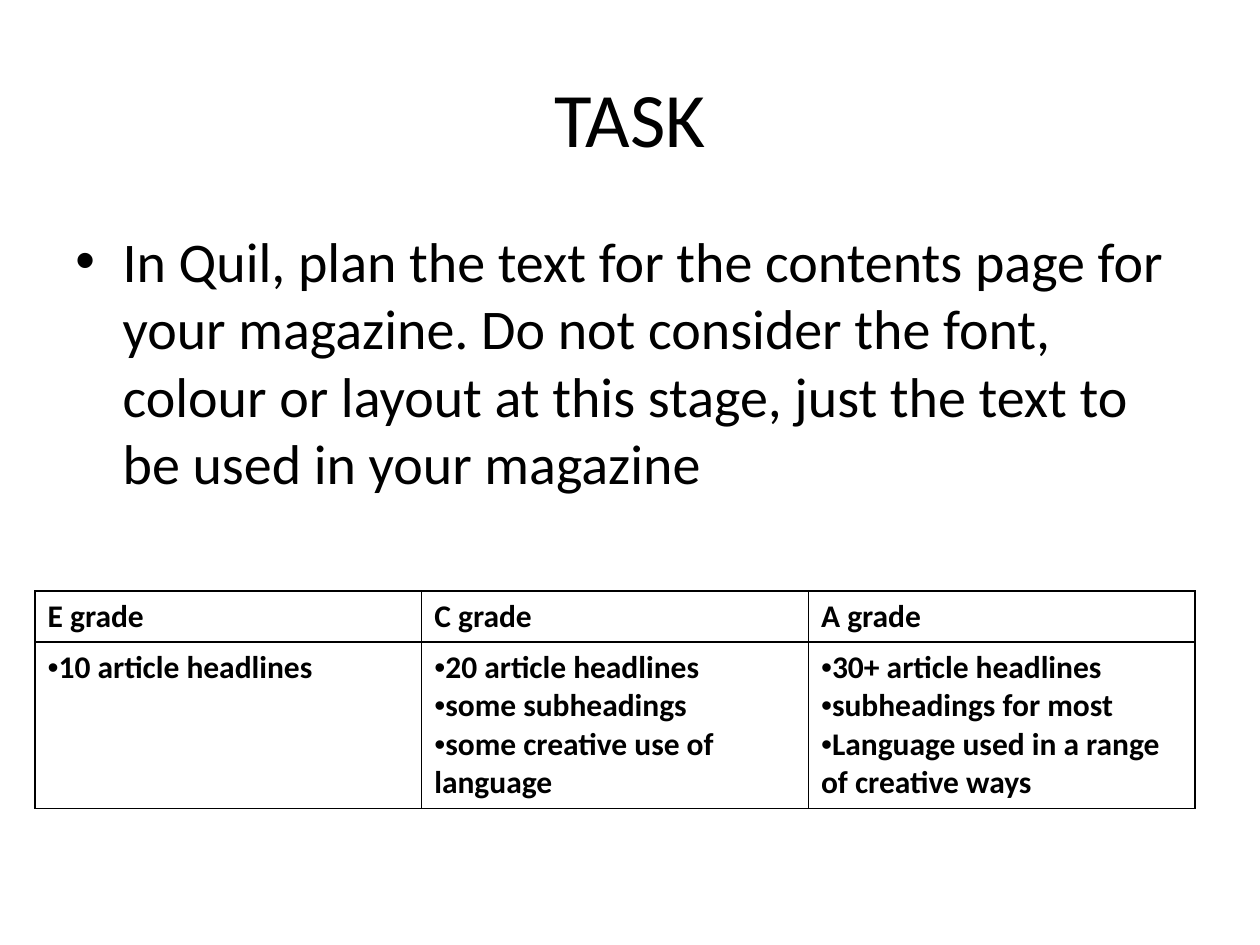
from lxml.etree import SubElement
from pptx import Presentation
from pptx.dml.color import RGBColor
from pptx.enum.text import MSO_ANCHOR as Anchor, PP_ALIGN as Align
from pptx.oxml.ns import qn
from pptx.util import Pt

BLACK = RGBColor(0x00, 0x00, 0x00)
WHITE = RGBColor(0xFF, 0xFF, 0xFF)
FONT = "Calibri"

TASK = ("In Quil, plan the text for the contents page for your magazine. "
        "Do not consider the font, colour or layout at this stage, "
        "just the text to be used in your magazine")
GRADES = {
    "E grade": ["10 article headlines"],
    "C grade": ["20 article headlines", "some subheadings",
                "some creative use of language"],
    "A grade": ["30+ article headlines", "subheadings for most",
                "Language used in a range of creative ways"],
}


def add_bullet(para, indent):
    properties = para._p.get_or_add_pPr()
    properties.set("marL", str(Pt(indent)))
    properties.set("indent", str(-Pt(indent)))
    SubElement(properties, qn("a:buFont"), typeface="Arial")
    SubElement(properties, qn("a:buChar"), char="•")


def write(frame, lines, size, bold=False, align=Align.LEFT, before=0,
          bullet_indent=None):
    """Put one paragraph per line; a bullet_indent of None means no bullets."""
    for index, line in enumerate(lines):
        para = frame.add_paragraph() if index else frame.paragraphs[0]
        para.alignment = align
        para.space_before = Pt(before)
        if bullet_indent is not None:
            add_bullet(para, bullet_indent)
        span = para.add_run()
        span.text = line
        span.font.name = FONT
        span.font.size = Pt(size)
        span.font.bold = bold
        span.font.color.rgb = BLACK


def add_text(page, lines, left, top, width, height, anchor=Anchor.TOP, **style):
    box = page.shapes.add_textbox(Pt(left), Pt(top), Pt(width), Pt(height))
    box.text_frame.word_wrap = True
    box.text_frame.vertical_anchor = anchor
    write(box.text_frame, lines, **style)


def add_borders(cell):
    properties = cell._tc.get_or_add_tcPr()
    for index, side in enumerate(("lnL", "lnR", "lnT", "lnB")):
        line = properties.makeelement(qn(f"a:{side}"), {"w": str(Pt(1))})
        fill = SubElement(line, qn("a:solidFill"))
        SubElement(fill, qn("a:srgbClr"), val=str(BLACK))
        properties.insert(index, line)


def add_grade_table(page, left, top, width, row_heights):
    frame = page.shapes.add_table(len(row_heights), len(GRADES), Pt(left),
                                  Pt(top), Pt(width), Pt(sum(row_heights)))
    table = frame.table
    for row, height in zip(table.rows, row_heights):
        row.height = Pt(height)
    for column, (grade, criteria) in enumerate(GRADES.items()):
        heading, detail = table.cell(0, column), table.cell(1, column)
        write(heading.text_frame, [grade], size=18, bold=True)
        write(detail.text_frame, criteria, size=18, bold=True, bullet_indent=0)
        for cell in (heading, detail):
            cell.fill.solid()
            cell.fill.fore_color.rgb = WHITE
            add_borders(cell)


def main():
    deck = Presentation()
    deck.slide_width, deck.slide_height = Pt(720), Pt(540)
    page = deck.slides.add_slide(deck.slide_layouts[6])
    add_text(page, ["TASK"], 36, 21.6, 648, 90, anchor=Anchor.MIDDLE,
             size=44, align=Align.CENTER)
    add_text(page, [TASK], 36, 126, 648, 172, size=32, before=2,
             bullet_indent=27)
    add_grade_table(page, 20, 337.7, 663, (29.2, 95))
    deck.save("out.pptx")


if __name__ == "__main__":
    main()
